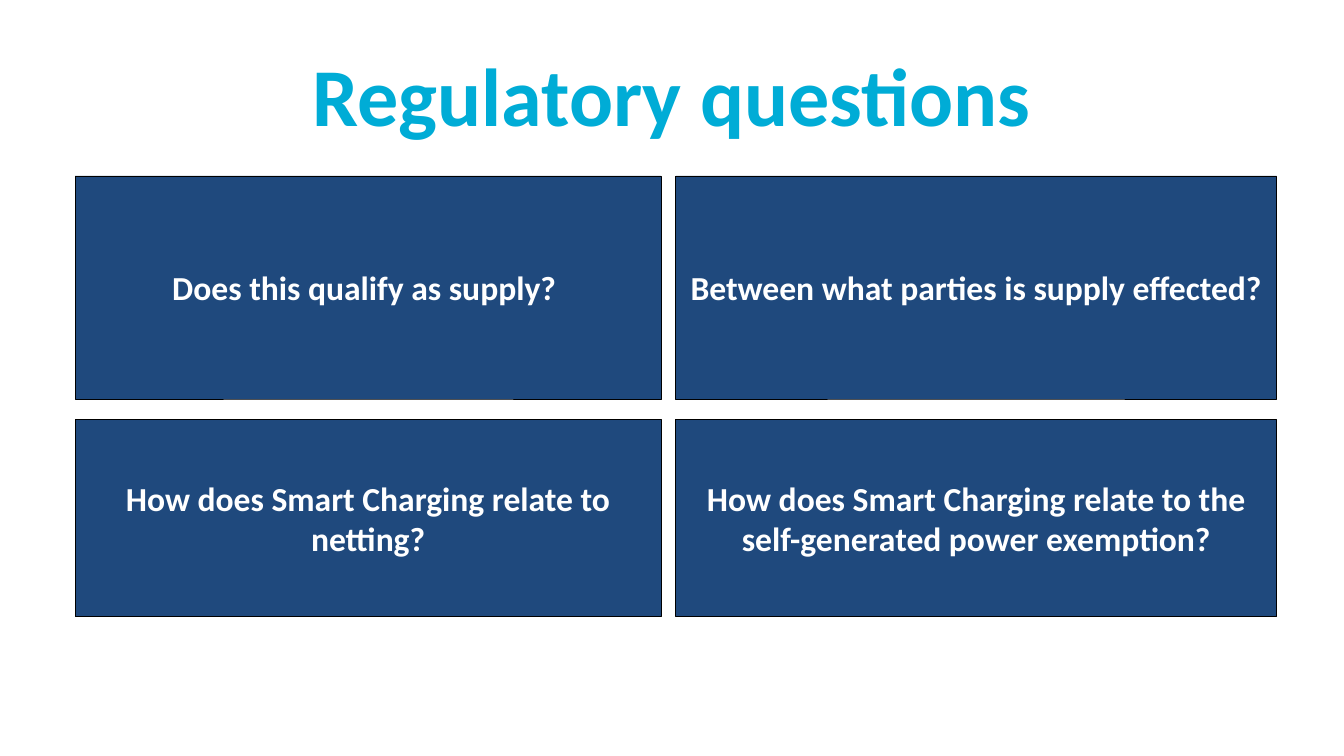
import pptx
import pptx.dml.color
import pptx.enum.shapes
import pptx.enum.text
import pptx.util

Inches = pptx.util.Inches
Pt = pptx.util.Pt

SLIDE_WIDTH = 10
SLIDE_HEIGHT = SLIDE_WIDTH * 9 / 16
COLORS = {"title": "00ACD6", "card": "1F497D", "border": "000000", "card_text": "FFFFFF"}
FONT = "Calibri"
GAP_X, GAP_Y = 0.11, 0.15
COLUMN_WIDTHS = (4.36, 4.47)
ROW_HEIGHTS = (1.66, 1.47)
QUESTIONS = (
    ("Does this qualify as supply? ", "Between what parties is supply effected?"),
    (
        "How does Smart Charging relate to netting?",
        "How does Smart Charging relate to the self-generated power exemption?",
    ),
)


def rgb(name):
    return pptx.dml.color.RGBColor.from_string(COLORS[name])


def write_centered(frame, text, size, color):
    frame.word_wrap = True
    frame.vertical_anchor = pptx.enum.text.MSO_ANCHOR.MIDDLE
    paragraph = frame.paragraphs[0]
    paragraph.alignment = pptx.enum.text.PP_ALIGN.CENTER
    run = paragraph.add_run()
    run.text = text
    run.font.name = FONT
    run.font.size = Pt(size)
    run.font.bold = True
    run.font.color.rgb = rgb(color)


def add_title(slide, left, top, width, height):
    title = slide.shapes.add_textbox(
        Inches(left), Inches(top), Inches(width), Inches(height)
    )
    write_centered(title.text_frame, "Regulatory questions", 44, "title")


def add_card(slide, question, left, top, width, height):
    card = slide.shapes.add_shape(
        pptx.enum.shapes.MSO_SHAPE.RECTANGLE,
        Inches(left), Inches(top), Inches(width), Inches(height),
    )
    card.shadow.inherit = False
    card.fill.solid()
    card.fill.fore_color.rgb = rgb("card")
    card.line.color.rgb = rgb("border")
    card.line.width = Pt(0.5)
    frame = card.text_frame
    frame.margin_left = frame.margin_right = Inches(0.04)
    frame.margin_top = frame.margin_bottom = Inches(0.05)
    write_centered(frame, question, 18, "card_text")


def add_question_grid(slide, left, top):
    y = top
    for row, height in zip(QUESTIONS, ROW_HEIGHTS):
        x = left
        for question, width in zip(row, COLUMN_WIDTHS):
            add_card(slide, question, x, y, width, height)
            x += width + GAP_X
        y += height + GAP_Y


def main():
    deck = pptx.Presentation()
    deck.slide_width = Inches(SLIDE_WIDTH)
    deck.slide_height = Inches(SLIDE_HEIGHT)
    slide = deck.slides.add_slide(deck.slide_layouts[6])
    add_title(slide, 0.5, 0.23, 9, 0.94)
    add_question_grid(slide, 0.56, 1.31)
    deck.save("out.pptx")


if __name__ == "__main__":
    main()
